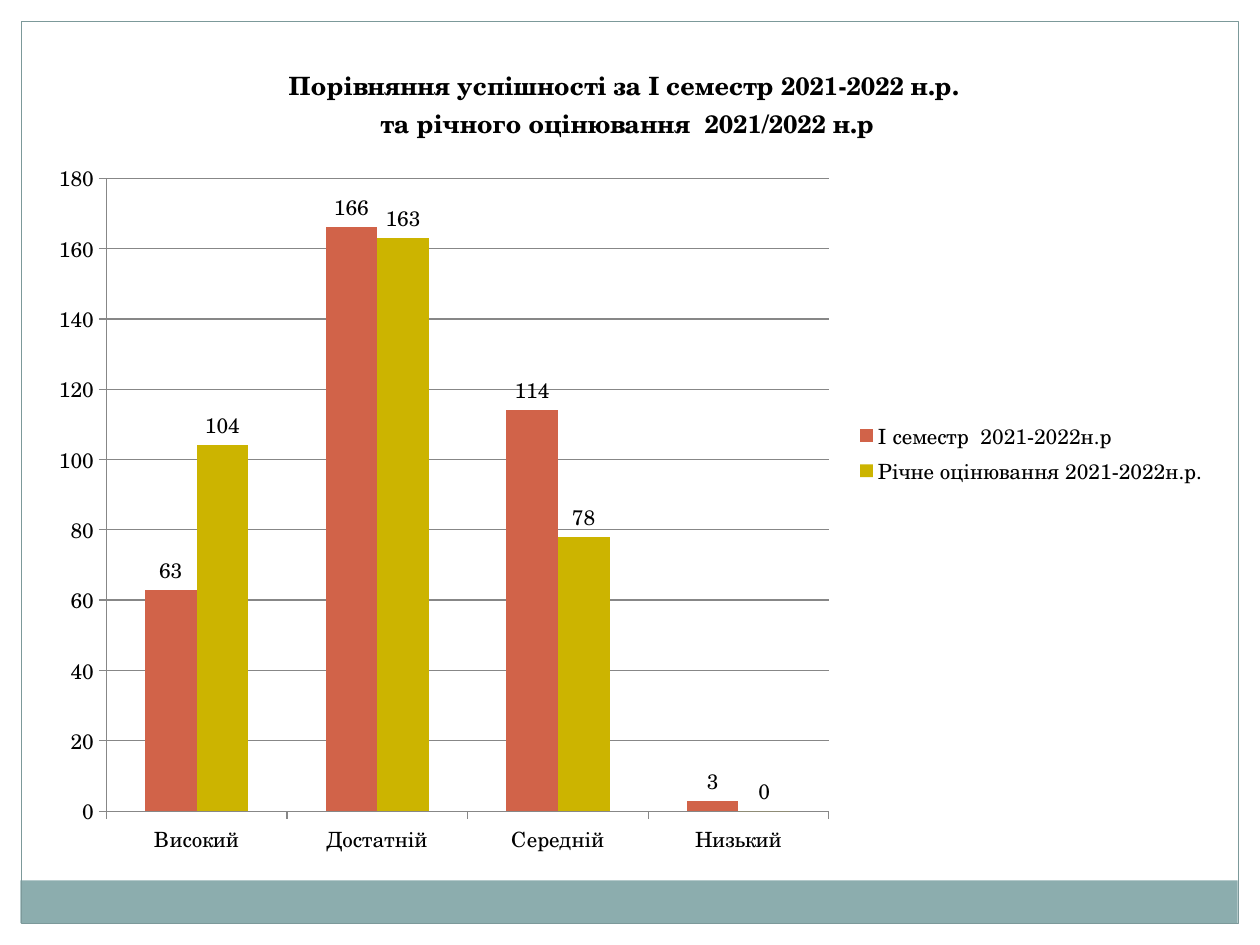
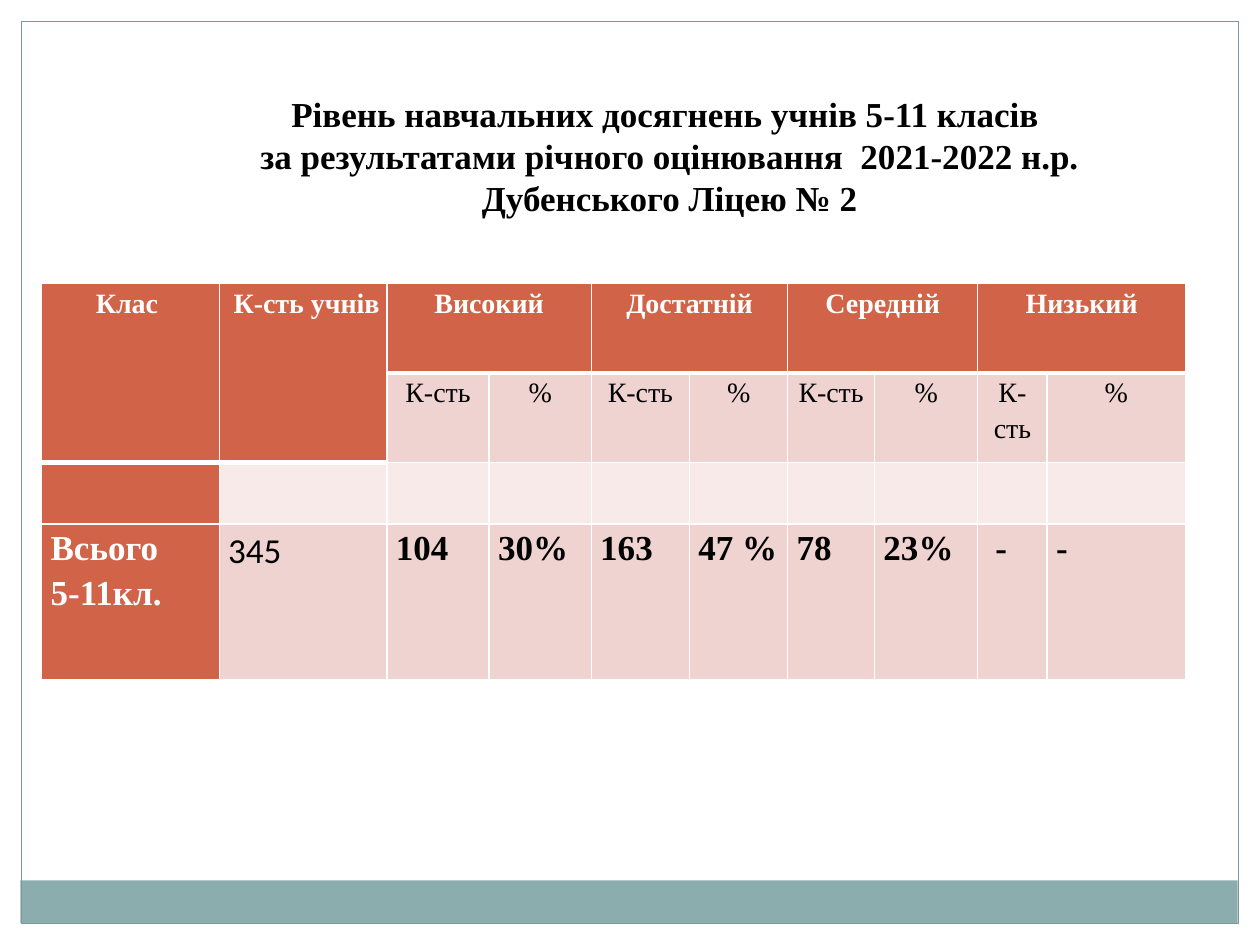
"""Builds two slides on school results: a column chart and a table of levels."""
from typing import Any, NamedTuple, Optional

from lxml import etree
from pptx import Presentation
from pptx.chart.data import CategoryChartData
from pptx.dml.color import RGBColor
from pptx.enum.chart import XL_CHART_TYPE, XL_LABEL_POSITION, XL_LEGEND_POSITION, XL_TICK_MARK
from pptx.enum.shapes import MSO_SHAPE
from pptx.enum.text import MSO_ANCHOR, MSO_AUTO_SIZE, PP_ALIGN
from pptx.oxml import parse_xml
from pptx.oxml.ns import nsdecls, qn
from pptx.util import Cm, Pt

COLUMNS = XL_CHART_TYPE.COLUMN_CLUSTERED
RIGHT = XL_LEGEND_POSITION.RIGHT
OUTER = XL_LABEL_POSITION.OUTSIDE_END
TICK = XL_TICK_MARK.OUTSIDE
RECT = MSO_SHAPE.RECTANGLE
TOP = MSO_ANCHOR.TOP
FIXED = MSO_AUTO_SIZE.NONE
MID, LEFT = PP_ALIGN.CENTER, PP_ALIGN.LEFT

INK = {"white": "FFFFFF", "black": "000000", "teal": "8CADAE", "edge": "7C999A",
       "red": "D16349", "gold": "CCB400", "rose": "EED3D0", "pale": "F7EAE9",
       "grid": "878787"}
SERIF, SANS, SCHOOL = "Times New Roman", "Calibri", "TeX Gyre Schola"

WIDE, HIGH, RIM = 25.4, 19.05, 0.43
LEVELS = ["Високий", "Достатній", "Середній", "Низький"]
TITLE = ["Рівень навчальних досягнень учнів 5-11 класів ",
         "за результатами річного оцінювання  2021-2022 н.р.",
         "Дубенського Ліцею № 2"]
HEADING = ("Порівняння успішності за І семестр 2021-2022 н.р. \n"
           "та річного оцінювання  2021/2022 н.р")


class Box(NamedTuple):
    """A place on the slide, in centimetres."""
    left: float
    top: float
    width: float
    height: float

    def cm(self) -> list:
        """Gives the four lengths."""
        return [Cm(side) for side in self]


class Band(NamedTuple):
    """A rectangle that all slides share."""
    box: Box
    fill: Optional[str] = None
    line: Optional[str] = None


class Term(NamedTuple):
    """One data series of the chart."""
    name: str
    marks: tuple
    ink: str


class Look(NamedTuple):
    """The format of a table cell."""
    fill: str
    ink: str = "black"
    size: float = 16
    bold: bool = False
    align: Any = MID
    pad: float = 0.08
    font: str = SERIF


BANDS = [Band(Box(0, 0, WIDE, RIM), "white"),
         Band(Box(WIDE - RIM, 0, RIM, HIGH), "white"),
         Band(Box(0, 0, RIM, HIGH), "white"),
         Band(Box(0.41, 17.75, 24.54, 0.86), "teal"),
         Band(Box(RIM, RIM, WIDE - 2 * RIM, HIGH - 2 * RIM), line="edge")]
TERMS = [Term("І семестр  2021-2022н.р", (63, 166, 114, 3), "red"),
         Term("Річне оцінювання 2021-2022н.р.", (104, 163, 78, 0), "gold")]
CHART = Box(0.71, 0.74, 23.88, 16.79)
PLOT = {"x": 0.06, "y": 0.17, "w": 0.61, "h": 0.76}
HEAD_BOX = Box(4.7, 1.73, 17.6, 2.82)
TABLE = Box(0.84, 5.72, 23.06, 7.99)
COLS = [3.58, 3.38, 2.06, 2.06, 1.98, 1.98, 1.75, 2.08, 1.4, 2.79]
ROWS = [1.8, 1.8, 1.24, 3.15]
CELLS = [["Клас ", " К-сть учнів"] + [part for level in LEVELS for part in (level, "")],
         ["", ""] + ["К-сть", "%"] * len(LEVELS),
         [""] * len(COLS),
         ["Всього\n5-11кл.", "345", "104", "30%", "163", "47 %", "78", "23%", " -", "- "]]

HEAD = Look("red", "white", bold=True)
SUB = Look("rose")
TOTAL = Look("rose", size=20, bold=True, align=LEFT, pad=0.18)


def rgb(ink: str) -> RGBColor:
    """Turns a colour name into a colour."""
    return RGBColor.from_string(INK[ink])


def put(thing: Any, form: dict) -> None:
    """Sets each attribute in the dict."""
    for key, value in form.items():
        setattr(thing, key, value)


def set_font(font: Any, name: str, size: float, bold: bool, ink: str = "black") -> None:
    """Formats a font."""
    put(font, {"name": name, "size": Pt(size), "bold": bold})
    font.color.rgb = rgb(ink)


def set_line(line: Any, ink: str) -> None:
    """Draws a thin line."""
    line.color.rgb = rgb(ink)
    line.width = Pt(0.75)


def add_bands(deck: Any, slide: Any) -> None:
    """Draws the shared bands and moves them to the master."""
    for num, band in enumerate(BANDS, 100):
        shape = slide.shapes.add_shape(RECT, *band.box.cm())
        shape.shadow.inherit = False
        if band.fill:
            shape.fill.solid()
            shape.fill.fore_color.rgb = rgb(band.fill)
        else:
            shape.fill.background()
        if band.line:
            set_line(shape.line, band.line)
        else:
            shape.line.fill.background()
        shape.element.xpath("./p:nvSpPr/p:cNvPr")[0].set("id", str(num))
        deck.slide_master.shapes.element.append(shape.element)


def add_chart(slide: Any) -> None:
    """Draws the chart of both terms."""
    data = CategoryChartData()
    data.categories = LEVELS
    for term in TERMS:
        data.add_series(term.name, term.marks)
    chart = slide.shapes.add_chart(COLUMNS, *CHART.cm(), data).chart
    set_font(chart.font, SCHOOL, 12, False)
    chart.has_title = chart.has_legend = True
    chart.chart_title.include_in_layout = False
    frame = chart.chart_title.text_frame
    frame.text = HEADING
    for para in frame.paragraphs:
        set_font(para.runs[0].font, SCHOOL, 14.4, True)
    put(chart.legend, {"position": RIGHT, "include_in_layout": False})
    for axis in (chart.category_axis, chart.value_axis):
        put(axis, {"major_tick_mark": TICK})
        set_line(axis.format.line, "grid")
    put(chart.value_axis, {"minimum_scale": 0, "maximum_scale": 180, "major_unit": 20})
    set_line(chart.value_axis.major_gridlines.format.line, "grid")
    plot = chart.plots[0]
    put(plot, {"gap_width": 150, "overlap": 0, "vary_by_categories": False,
               "has_data_labels": True})
    put(plot.data_labels, {"show_value": True, "position": OUTER})
    for bars, term in zip(plot.series, TERMS):
        bars.format.fill.solid()
        bars.format.fill.fore_color.rgb = rgb(term.ink)
    place_plot(chart)


def place_plot(chart: Any) -> None:
    """Fixes the inner plot area."""
    area = chart.element.find(".//" + qn("c:plotArea"))
    old = area.find(qn("c:layout"))
    if old is not None:
        area.remove(old)
    layout = etree.Element(qn("c:layout"))
    manual = etree.SubElement(layout, qn("c:manualLayout"))
    modes = {"layoutTarget": "inner", "xMode": "edge", "yMode": "edge"}
    for key, value in {**modes, **PLOT}.items():
        etree.SubElement(manual, qn("c:" + key), val=str(value))
    area.insert(0, layout)


def add_title(slide: Any) -> None:
    """Moves and formats the title."""
    title = slide.shapes.title
    put(title, dict(zip(Box._fields, HEAD_BOX.cm())))
    frame = title.text_frame
    put(frame, {"word_wrap": True, "auto_size": FIXED, "vertical_anchor": TOP})
    frame.text = "\n".join(TITLE)
    for para in frame.paragraphs:
        para.alignment = MID
        set_font(para.runs[0].font, SERIF, 20, True)


def pick_look(row: int, col: int) -> Look:
    """Picks the format for a cell."""
    if row == 0 or (row == 1 and col < 2):
        return HEAD
    if row == 1:
        return SUB
    if col == 0:
        return TOTAL._replace(fill="red", ink="white")
    if row == 2:
        return TOTAL._replace(fill="pale")
    return TOTAL._replace(font=SANS, bold=False) if col == 1 else TOTAL


def set_edges(cell: Any, row: int, col: int) -> None:
    """Draws white cell borders, thick round the head row."""
    thick_top = row == 1 or (row == 2 and col == 0)
    sizes = {"L": 1, "R": 1, "T": 3 if thick_top else 1, "B": 1 if row else 3}
    props = cell._tc.get_or_add_tcPr()
    for spot, (side, size) in enumerate(sizes.items()):
        props.insert(spot, parse_xml(
            f'<a:ln{side} {nsdecls("a")} w="{Pt(size)}"><a:solidFill>'
            f'<a:srgbClr val="{INK["white"]}"/></a:solidFill></a:ln{side}>'))


def fill_cell(cell: Any, text: str, look: Look) -> None:
    """Writes and formats a cell."""
    cell.fill.solid()
    cell.fill.fore_color.rgb = rgb(look.fill)
    put(cell, {"margin_left": Cm(look.pad), "margin_right": Cm(look.pad),
               "margin_top": 0, "margin_bottom": 0, "vertical_anchor": TOP})
    if not text:
        return
    cell.text_frame.text = text
    for para in cell.text_frame.paragraphs:
        put(para, {"alignment": look.align, "line_spacing": 1.15})
        set_font(para.runs[0].font, look.font, look.size, look.bold, look.ink)


def add_table(slide: Any) -> None:
    """Draws the table of levels."""
    table = slide.shapes.add_table(len(ROWS), len(COLS), *TABLE.cm()).table
    put(table, {"horz_banding": False})
    for col, width in zip(table.columns, COLS):
        col.width = Cm(width)
    for row, height in zip(table.rows, ROWS):
        row.height = Cm(height)
    for col in range(2):
        table.cell(0, col).merge(table.cell(1, col))
    for col in range(2, len(COLS), 2):
        table.cell(0, col).merge(table.cell(0, col + 1))
    for row, texts in enumerate(CELLS):
        for col, text in enumerate(texts):
            cell = table.cell(row, col)
            fill_cell(cell, text, pick_look(row, col))
            set_edges(cell, row, col)


def main() -> None:
    """Builds and saves the deck."""
    deck = Presentation()
    put(deck, {"slide_width": Cm(WIDE), "slide_height": Cm(HIGH)})
    first = deck.slides.add_slide(deck.slide_layouts[6])
    add_bands(deck, first)
    add_chart(first)
    second = deck.slides.add_slide(deck.slide_layouts[5])
    add_table(second)
    add_title(second)
    deck.save("out.pptx")


if __name__ == "__main__":
    main()
